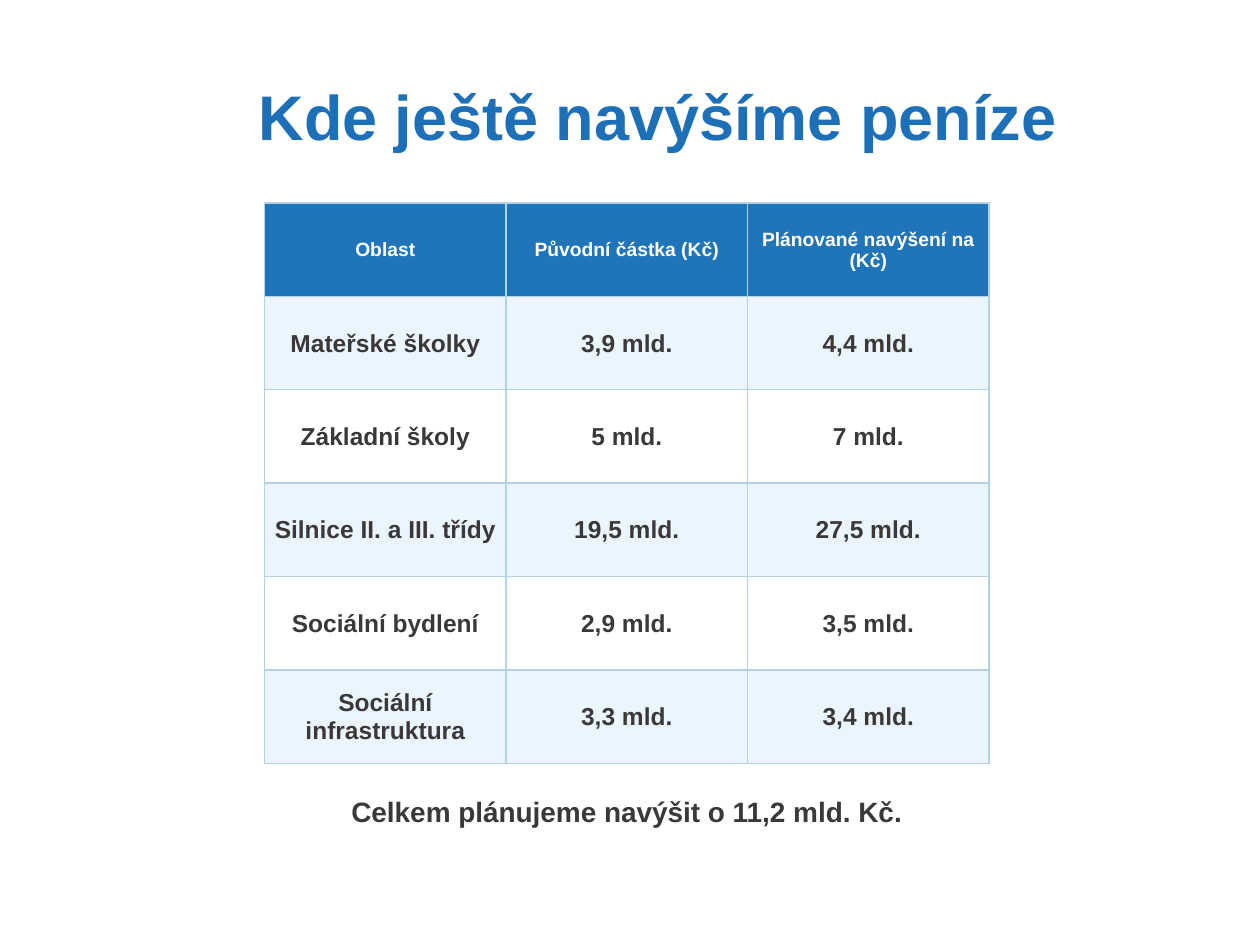
from lxml.etree import SubElement
from pptx import Presentation
from pptx.dml.color import RGBColor
from pptx.enum.text import MSO_ANCHOR, PP_ALIGN
from pptx.oxml.ns import qn
from pptx.util import Inches, Pt

COLORS = {
    "title": "1D70B8", "header": "2074BA", "band": "EBF5FF",
    "white": "FFFFFF", "text": "3B3838", "border": "B4D1E8",
}
TITLE = "Kde ještě navýšíme peníze"
HEADER = ("Oblast", "Původní částka (Kč)", "Plánované navýšení na (Kč)")
BUDGETS = [
    ("Mateřské školky", "3,9 mld.", "4,4 mld."),
    ("Základní školy", "5 mld.", "7 mld."),
    ("Silnice II. a III. třídy", "19,5 mld.", "27,5 mld."),
    ("Sociální bydlení", "2,9 mld.", "3,5 mld."),
    ("Sociální infrastruktura", "3,3 mld.", "3,4 mld."),
]
TOTAL = "Celkem plánujeme navýšit o 11,2 mld. Kč."
TABLE_LEFT, TABLE_TOP = 2.1, 1.61
TABLE_WIDTH, TABLE_HEIGHT = 5.75, 4.45


def write(frame, text, size, color):
    frame.word_wrap = True
    paragraph = frame.paragraphs[0]
    paragraph.alignment = PP_ALIGN.CENTER
    run = paragraph.add_run()
    run.text = text
    run.font.name = "Arial"
    run.font.size = Pt(size)
    run.font.bold = True
    run.font.color.rgb = RGBColor.from_string(COLORS[color])


def fill_cell(cell, color):
    """Draw the four borders, then the fill that must follow them in the XML."""
    properties = cell._tc.get_or_add_tcPr()
    for side in ("a:lnL", "a:lnR", "a:lnT", "a:lnB"):
        line = SubElement(properties, qn(side), w=str(Pt(1)))
        solid = SubElement(line, qn("a:solidFill"))
        SubElement(solid, qn("a:srgbClr"), val=COLORS["border"])
    cell.fill.solid()
    cell.fill.fore_color.rgb = RGBColor.from_string(COLORS[color])


def add_budget_table(slide):
    rows = [HEADER, *BUDGETS]
    table = slide.shapes.add_table(
        len(rows), len(HEADER), Inches(TABLE_LEFT), Inches(TABLE_TOP),
        Inches(TABLE_WIDTH), Inches(TABLE_HEIGHT)).table
    for r, row in enumerate(rows):
        if r == 0:
            fill, size, color = "header", 11, "white"
        else:
            fill, size, color = ("band" if r % 2 else "white"), 14, "text"
        for c, text in enumerate(row):
            cell = table.cell(r, c)
            cell.margin_left = cell.margin_right = cell.margin_top = Inches(0.01)
            cell.margin_bottom = 0
            cell.vertical_anchor = MSO_ANCHOR.MIDDLE
            fill_cell(cell, fill)
            write(cell.text_frame, text, size, color)


def main():
    prs = Presentation()
    prs.slide_width, prs.slide_height = Inches(10), Inches(7.5)
    slide = prs.slides.add_slide(prs.slide_layouts[5])

    title = slide.shapes.title
    title.left, title.top = Inches(0.44), Inches(0.56)
    title.width, title.height = Inches(9.06), Inches(0.71)
    title.text_frame.margin_left = Inches(0.6)
    title.text_frame.vertical_anchor = MSO_ANCHOR.MIDDLE
    write(title.text_frame, TITLE, 36, "title")

    add_budget_table(slide)

    total = slide.shapes.add_textbox(
        Inches(1.03), Inches(5.98), Inches(7.89), Inches(0.64))
    total.text_frame.vertical_anchor = MSO_ANCHOR.BOTTOM
    write(total.text_frame, TOTAL, 16, "text")

    prs.save("out.pptx")


if __name__ == "__main__":
    main()
